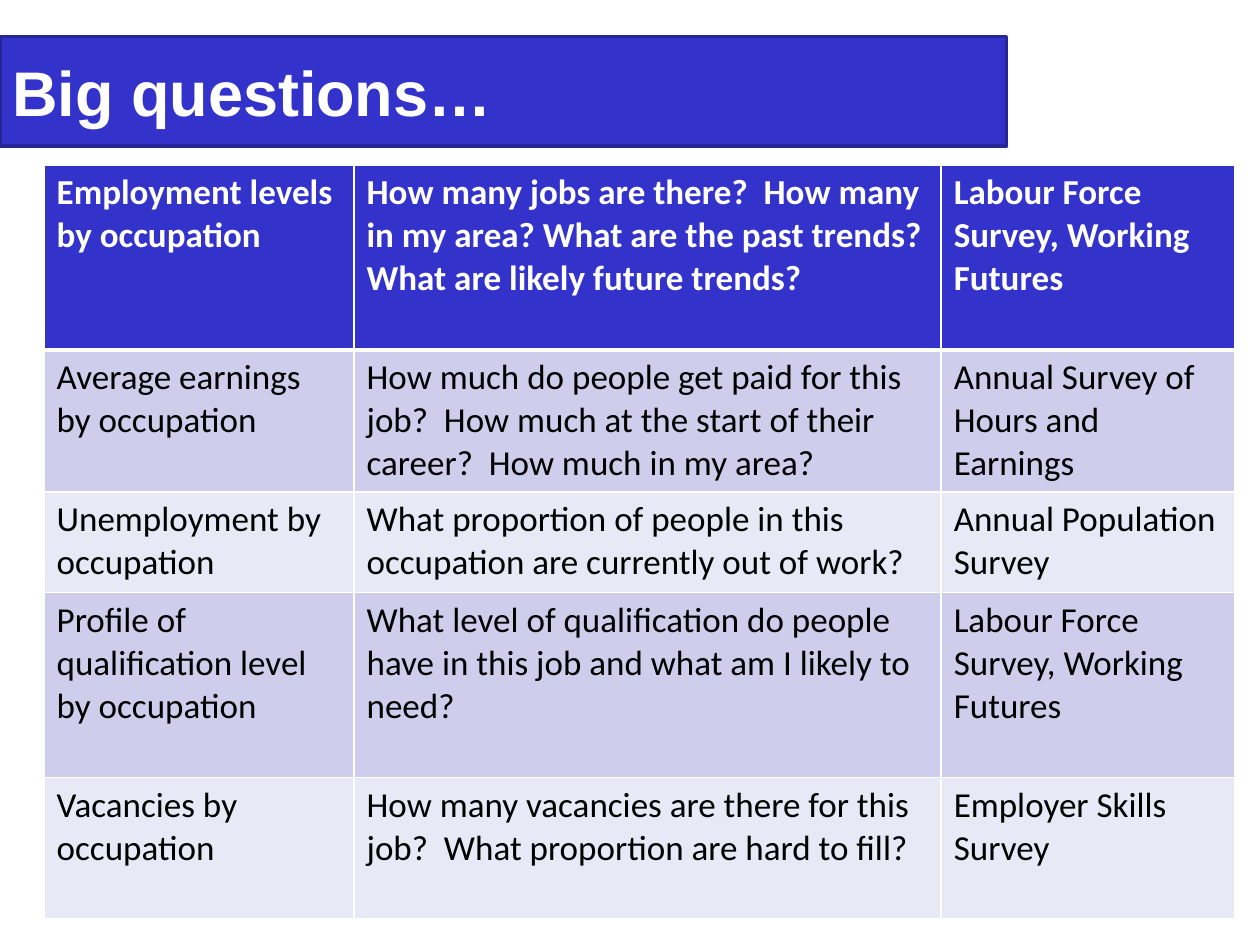
import pptx
import pptx.dml.color
import pptx.enum.shapes
import pptx.enum.text
import pptx.oxml
import pptx.oxml.ns
import pptx.util
from pptx.util import Inches

COLORS = {
    "blue": "3333CC",
    "outline": "262697",
    "band_dark": "CECEEC",
    "band_light": "E8E8F6",
    "white": "FFFFFF",
    "black": "000000",
}
COLUMN_WIDTHS = [2.46, 4.66, 2.33]
ROW_HEIGHTS = [1.47, 1.13, 0.8, 1.47, 1.12]
QUESTIONS = [
    ("Employment levels by occupation",
     "How many jobs are there?  How many in my area? What are the past trends? "
     "What are likely future trends?",
     "Labour Force Survey, Working Futures"),
    ("Average earnings by occupation",
     "How much do people get paid for this job?  How much at the start of their career?  "
     "How much in my area?",
     "Annual Survey of Hours and Earnings"),
    ("Unemployment by occupation",
     "What proportion of people in this occupation are currently out of work?",
     "Annual Population Survey"),
    ("Profile of qualification level by occupation",
     "What level of qualification do people have in this job and what am I likely to need?",
     "Labour Force Survey, Working Futures"),
    ("Vacancies by occupation",
     "How many vacancies are there for this job?  What proportion are hard to fill?",
     "Employer Skills Survey"),
]


def rgb(name):
    return pptx.dml.color.RGBColor.from_string(COLORS[name])


def fill_solid(target, color):
    target.fill.solid()
    target.fill.fore_color.rgb = rgb(color)


def write(text_frame, text, font_name, size, color, bold):
    text_frame.text = text
    paragraph = text_frame.paragraphs[0]
    paragraph.alignment = pptx.enum.text.PP_ALIGN.LEFT
    font = paragraph.runs[0].font
    font.name = font_name
    font.size = pptx.util.Pt(size)
    font.bold = bold
    font.color.rgb = rgb(color)


def set_borders(cell, top, bottom):
    properties = cell._tc.get_or_add_tcPr()
    widths = {"lnL": 1, "lnR": 1, "lnT": top, "lnB": bottom}
    for position, (tag, width) in enumerate(widths.items()):
        line = pptx.oxml.parse_xml(
            f'<a:{tag} {pptx.oxml.ns.nsdecls("a")} w="{pptx.util.Pt(width)}">'
            f'<a:solidFill><a:srgbClr val="{COLORS["white"]}"/></a:solidFill></a:{tag}>'
        )
        properties.insert(position, line)


def add_title(slide, left, top, width, height):
    shape = slide.shapes.add_shape(
        pptx.enum.shapes.MSO_SHAPE.RECTANGLE, left, top, width, height)
    shape.shadow.inherit = False
    fill_solid(shape, "blue")
    shape.line.color.rgb = rgb("outline")
    shape.line.width = pptx.util.Pt(2)
    shape.text_frame.word_wrap = True
    shape.text_frame.vertical_anchor = pptx.enum.text.MSO_ANCHOR.MIDDLE
    write(shape.text_frame, "Big questions…", "Arial", 36, "white", True)


def add_question_table(slide, left, top, width, height):
    table = slide.shapes.add_table(
        len(QUESTIONS), len(COLUMN_WIDTHS), left, top, width, height).table
    for column, share in zip(table.columns, COLUMN_WIDTHS):
        column.width = int(width * share / sum(COLUMN_WIDTHS))
    for row, share in zip(table.rows, ROW_HEIGHTS):
        row.height = int(height * share / sum(ROW_HEIGHTS))
    for row_index, texts in enumerate(QUESTIONS):
        header = row_index == 0
        band = "band_dark" if row_index % 2 else "band_light"
        for column_index, text in enumerate(texts):
            cell = table.cell(row_index, column_index)
            fill_solid(cell, "blue" if header else band)
            set_borders(cell, top=3 if row_index == 1 else 1, bottom=3 if header else 1)
            write(cell.text_frame, text, "Calibri", 20,
                  "white" if header else "black", header)


def main():
    presentation = pptx.Presentation()
    presentation.slide_width = Inches(10)
    presentation.slide_height = Inches(7.5)
    slide = presentation.slides.add_slide(presentation.slide_layouts[6])
    add_question_table(slide, Inches(0.35), Inches(1.31), Inches(9.45), Inches(5.98))
    add_title(slide, Inches(0), Inches(0.29), Inches(7.99), Inches(0.87))
    presentation.save("out.pptx")


if __name__ == "__main__":
    main()
